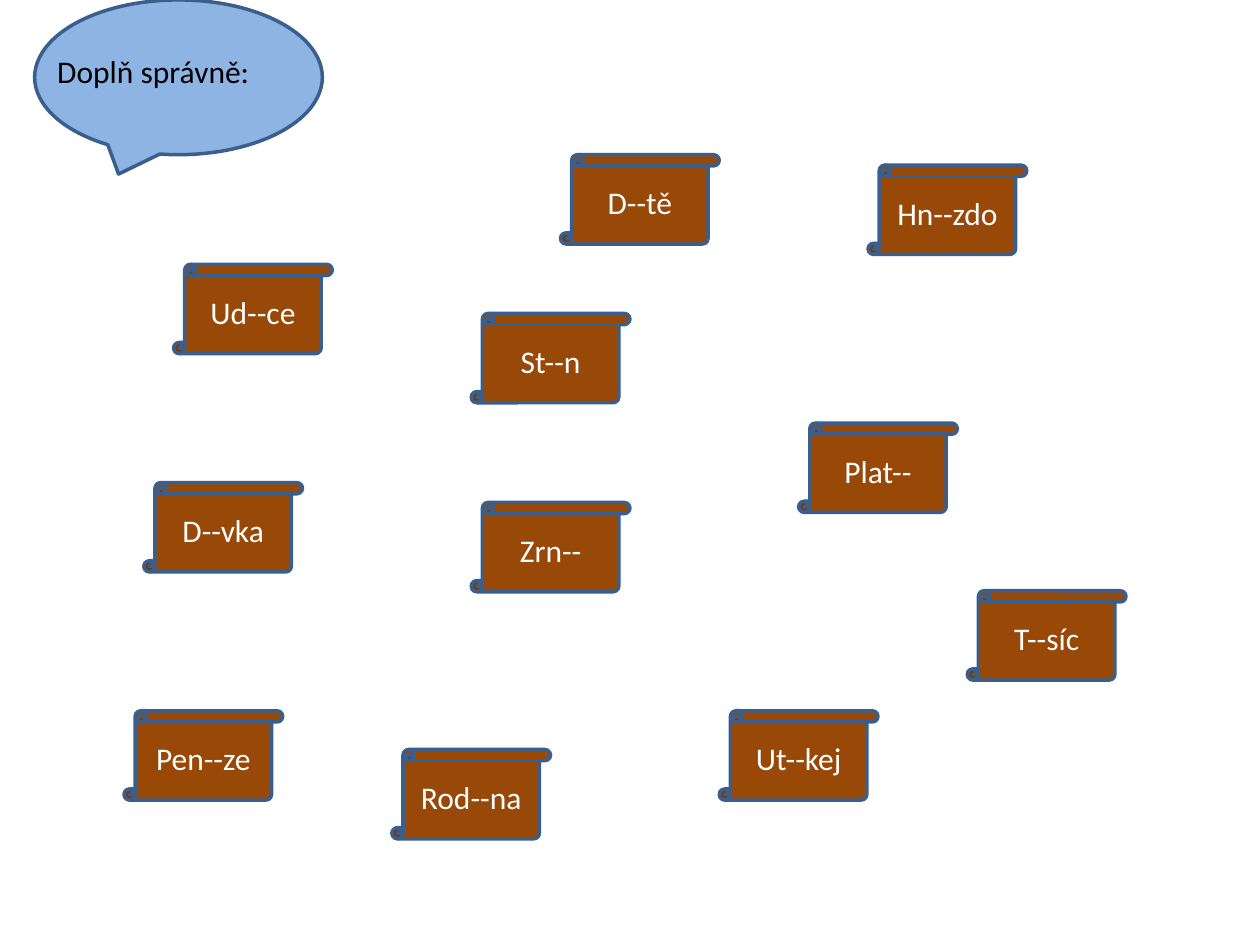
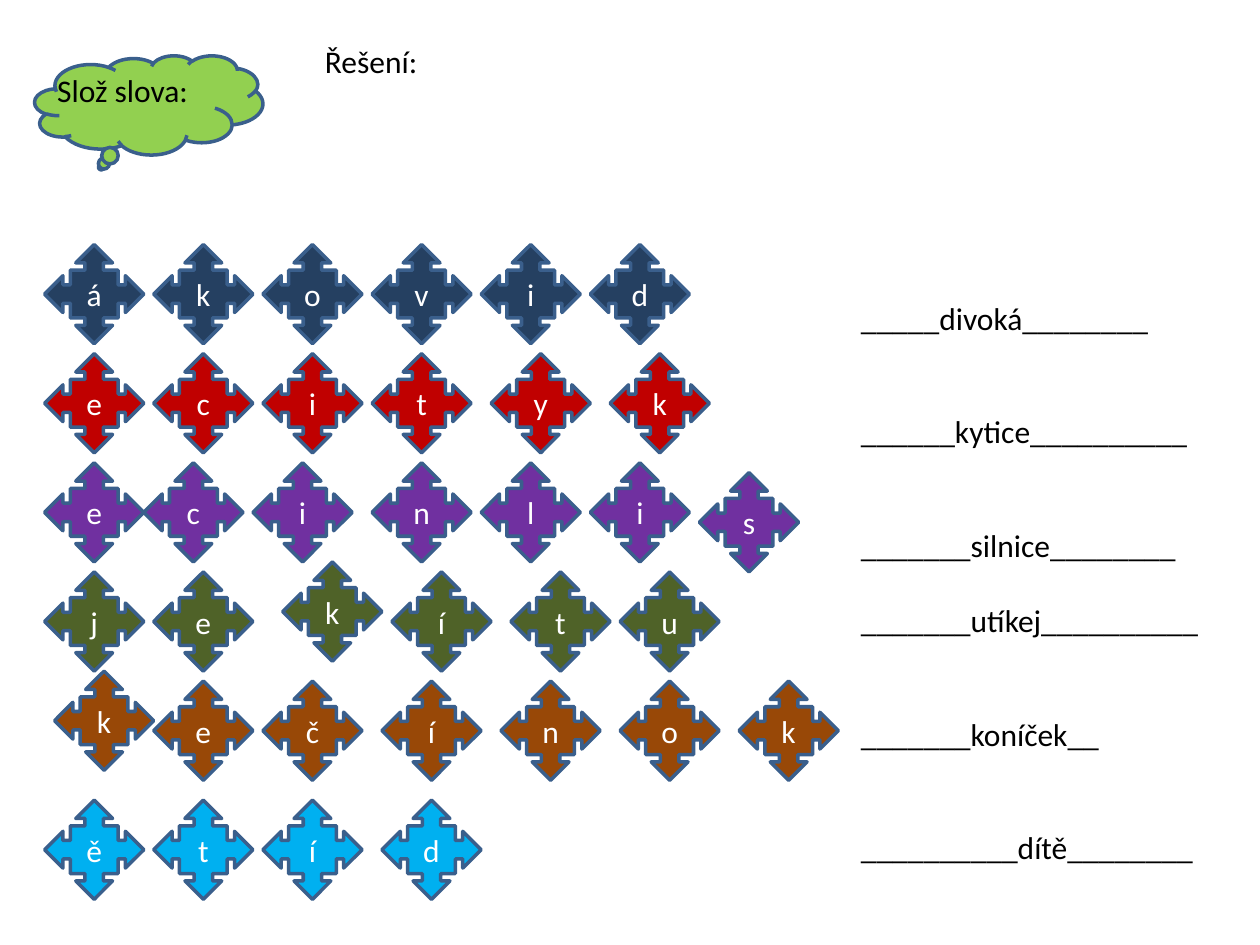
from lxml import etree
from pptx import Presentation
from pptx import util as u
from pptx.dml.color import RGBColor
from pptx.enum import shapes, text
from pptx.oxml.ns import qn

COLOURS = {
    "outline": "3A5F8C", "black": "000000", "white": "FFFFFF",
    "sky": "8EB4E3", "lime": "92D050", "navy": "254061", "red": "C00000",
    "purple": "7030A0", "olive": "4F6228", "brown": "984807", "cyan": "00B0F0",
}
FONT = "Calibri"
FONT_SIZE = u.Pt(18)
BLANK_LINE = 21.6
TITLE_ONLY, TITLE_AND_BODY = 5, 1

SCROLL_SIZE = (3.2, 1.8)
SCROLLS = [
    ("Ud--ce", 3.5, 5.33), ("T--síc", 19.5, 11.91), ("D--tě", 11.3, 3.12),
    ("St--n", 9.5, 6.32), ("D--vka", 2.9, 9.73), ("Zrn--", 9.5, 10.13),
    ("Pen--ze", 2.5, 14.33), ("Rod--na", 7.9, 15.11), ("Ut--kej", 14.5, 14.33),
    ("Plat--", 16.1, 8.53), ("Hn--zdo", 17.5, 3.33),
]

TILE = 2.0
TILE_PITCH = 2.2
LETTER_ROWS = [
    ("ákovid", "navy", {}),
    ("ecityk", "red", {4: (0.2, 0), 5: (0.4, 0)}),
    ("ecinlis", "purple", {1: (-0.2, 0), 2: (-0.2, 0), 6: (0, 0.2)}),
    ("jekítu", "olive", {2: (0.4, -0.2), 3: (0.4, 0), 4: (0.6, 0), 5: (0.6, 0)}),
    ("kečínok", "brown", {0: (0.2, -0.2), 3: (0.2, 0), 4: (0.4, 0),
                          5: (0.6, 0), 6: (0.8, 0)}),
    ("ětíd", "cyan", {0: (0, 0.2), 1: (0, 0.2), 2: (0, 0.2), 3: (0.2, 0.2)}),
]

ANSWERS = [
    ("_____divoká________", 0), ("______kytice__________", 2),
    ("_______silnice________", 2), ("_______utíkej__________", 1),
    ("_______koníček__", 2), ("__________dítě________", 2),
]


def colour(name):
    return RGBColor.from_string(COLOURS[name])


def format_paragraph(paragraph, font_colour, alignment):
    paragraph.alignment = alignment
    paragraph.font.name = FONT
    paragraph.font.size = FONT_SIZE
    paragraph.font.color.rgb = colour(font_colour)


def place(shape, box):
    shape.left, shape.top, shape.width, shape.height = map(u.Cm, box)


def add_filled_shape(slide, kind, box, fill, label=None):
    shape = slide.shapes.add_shape(kind, *map(u.Cm, box))
    shape.shadow.inherit = False
    shape.fill.solid()
    shape.fill.fore_color.rgb = colour(fill)
    shape.line.color.rgb = colour("outline")
    shape.line.width = u.Pt(2)
    if label:
        frame = shape.text_frame
        frame.text = label
        frame.vertical_anchor = text.MSO_ANCHOR.MIDDLE
        format_paragraph(frame.paragraphs[0], "white", text.PP_ALIGN.CENTER)
    return shape


def write_lines(shape, box, lines):
    place(shape, box)
    frame = shape.text_frame
    frame.word_wrap = True
    frame.auto_size = text.MSO_AUTO_SIZE.NONE
    frame.vertical_anchor = text.MSO_ANCHOR.TOP
    frame.text = "\n".join(lines)
    for paragraph in frame.paragraphs:
        format_paragraph(paragraph, "black", text.PP_ALIGN.LEFT)
    return frame


def add_callout_title(slide, kind, callout_box, fill, title, title_box):
    callout = add_filled_shape(slide, kind, callout_box, fill)
    slide.shapes.title.element.addprevious(callout.element)
    write_lines(slide.shapes.title, title_box, [title])


def add_letter_grid(slide, left, top):
    for row, (letters, fill, nudges) in enumerate(LETTER_ROWS):
        for column, letter in enumerate(letters):
            shift_x, shift_y = nudges.get(column, (0, 0))
            box = (left + column * TILE_PITCH + shift_x,
                   top + row * TILE_PITCH + shift_y, TILE, TILE)
            add_filled_shape(slide, shapes.MSO_SHAPE.QUAD_ARROW_CALLOUT,
                             box, fill, letter)


def add_answers(slide, box):
    frame = write_lines(slide.placeholders[1], box, [line for line, _ in ANSWERS])
    for paragraph, (_, blank_lines) in zip(frame.paragraphs, ANSWERS):
        paragraph.space_before = u.Pt(blank_lines * BLANK_LINE)
        properties = paragraph._p.get_or_add_pPr()
        properties.set("marL", "0")
        properties.set("indent", "0")
        etree.SubElement(properties, qn("a:buNone"))
        properties.append(properties.find(qn("a:defRPr")))


def build_fill_in_slide(presentation):
    slide = presentation.slides.add_slide(presentation.slide_layouts[TITLE_ONLY])
    add_callout_title(slide, shapes.MSO_SHAPE.OVAL_CALLOUT, (0.7, 0, 5.8, 3.12),
                      "sky", "Doplň správně:", (0.9, 0.92, 8, 1.03))
    for word, left, top in SCROLLS:
        add_filled_shape(slide, shapes.MSO_SHAPE.VERTICAL_SCROLL,
                         (left, top, *SCROLL_SIZE), "brown", word)


def build_word_puzzle_slide(presentation):
    slide = presentation.slides.add_slide(presentation.slide_layouts[TITLE_AND_BODY])
    add_callout_title(slide, shapes.MSO_SHAPE.CLOUD_CALLOUT, (0.7, 1.12, 4.6, 2),
                      "lime", "Slož slova:", (0.9, 1.3, 9.2, 1.03))
    add_letter_grid(slide, 0.9, 4.93)
    add_answers(slide, (17.1, 5.9, 7.6, 11.8))
    solution_box = (6.3, 0.73, 4.6, 1.03)
    solution = slide.shapes.add_textbox(*map(u.Cm, solution_box))
    write_lines(solution, solution_box, ["Řešení:"])


def main():
    presentation = Presentation()
    presentation.slide_width = u.Cm(25.4)
    presentation.slide_height = u.Cm(19.05)
    build_fill_in_slide(presentation)
    build_word_puzzle_slide(presentation)
    presentation.save("out.pptx")


if __name__ == "__main__":
    main()
